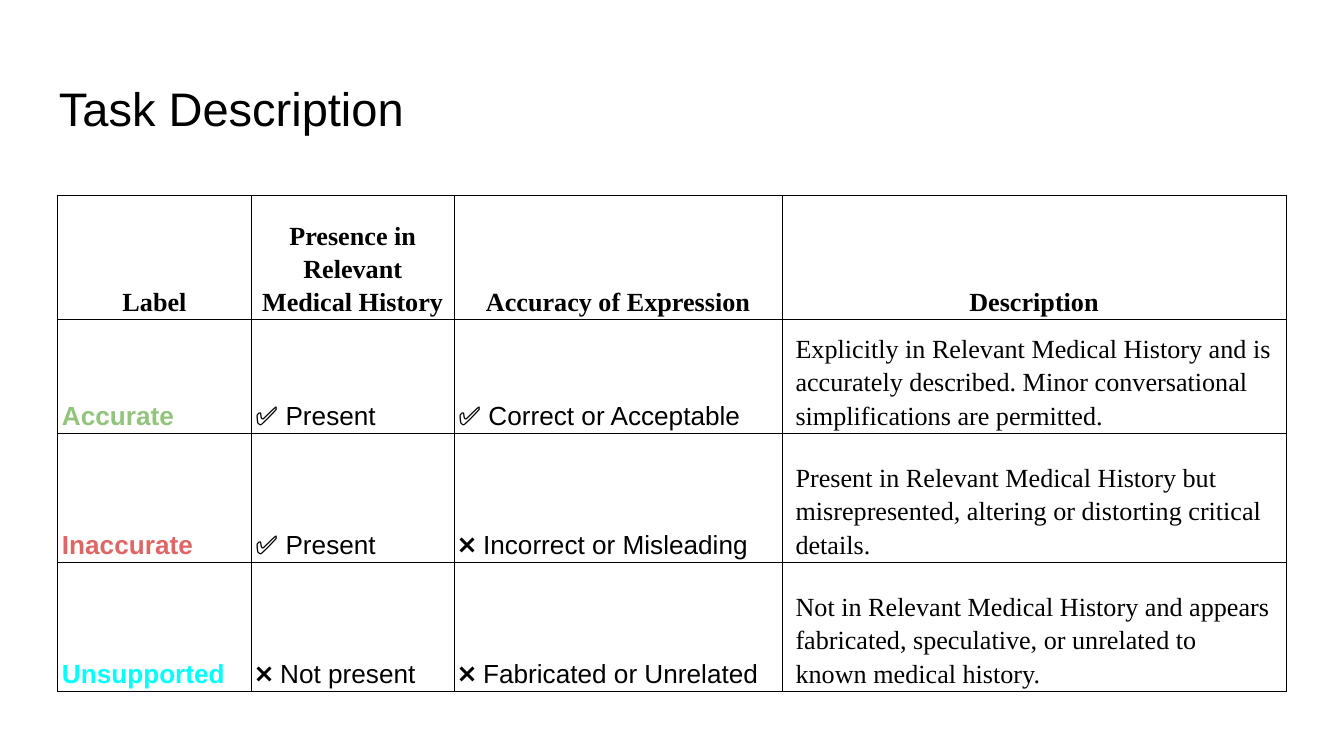
import pptx
import pptx.util
import pptx.dml.color
import pptx.enum.text
import pptx.oxml
import pptx.oxml.ns

Inches = pptx.util.Inches
Pt = pptx.util.Pt
RGB = pptx.dml.color.RGBColor
ALIGN = pptx.enum.text.PP_ALIGN
ANCHOR = pptx.enum.text.MSO_ANCHOR

BLACK = RGB(0x00, 0x00, 0x00)
GREEN = RGB(0x93, 0xC4, 0x7D)
RED = RGB(0xE0, 0x66, 0x66)
CYAN = RGB(0x00, 0xFF, 0xFF)
SANS = "Arial"
SERIF = "Times New Roman"

WIDTHS = [1.44, 1.51, 2.44, 3.75]
HEIGHTS = [0.93, 0.74, 0.96, 0.96]
HEADS = ["Label", "Presence in Relevant Medical History",
         "Accuracy of Expression", "Description"]
LABELS = [
    (GREEN, "Accurate", "✅ Present", "✅ Correct or Acceptable",
     "Explicitly in Relevant Medical History and is accurately described. "
     "Minor conversational simplifications are permitted."),
    (RED, "Inaccurate", "✅ Present", "❌ Incorrect or Misleading",
     "Present in Relevant Medical History but misrepresented, "
     "altering or distorting critical details."),
    (CYAN, "Unsupported", "❌ Not present", "❌ Fabricated or Unrelated",
     "Not in Relevant Medical History and appears fabricated, "
     "speculative, or unrelated to known medical history."),
]


def write(frame, text, size=14, font=SANS, color=BLACK, bold=False,
          align=ALIGN.LEFT, spacing=1.15):
    para = frame.paragraphs[0]
    para.alignment = align
    para.line_spacing = spacing
    run = para.add_run()
    run.text = text
    run.font.size = Pt(size)
    run.font.name = font
    run.font.color.rgb = color
    run.font.bold = bold


def add_title(slide, text):
    box = slide.shapes.add_textbox(
        Inches(0.34), Inches(0.49), Inches(9.32), Inches(0.63))
    frame = box.text_frame
    frame.word_wrap = True
    frame.vertical_anchor = ANCHOR.MIDDLE
    frame.margin_left = frame.margin_right = Inches(0.1)
    frame.margin_top = frame.margin_bottom = Inches(0.1)
    write(frame, text, size=25.2, spacing=1.0)


def add_edges(cell):
    props = cell._tc.get_or_add_tcPr()
    for place, side in enumerate(("lnL", "lnR", "lnT", "lnB")):
        line = pptx.oxml.parse_xml(
            f'<a:{side} {pptx.oxml.ns.nsdecls("a")} w="{Pt(0.48)}">'
            f'<a:solidFill><a:srgbClr val="{BLACK}"/></a:solidFill></a:{side}>')
        props.insert(place, line)


def fill_cell(cell, text, side=1 / 32, **style):
    cell.fill.background()
    cell.vertical_anchor = ANCHOR.BOTTOM
    cell.margin_left = cell.margin_right = Inches(side)
    cell.margin_top = cell.margin_bottom = Inches(1 / 48)
    add_edges(cell)
    write(cell.text_frame, text, **style)


def add_grid(slide):
    holder = slide.shapes.add_table(
        len(HEIGHTS), len(WIDTHS), Inches(0.43), Inches(1.45),
        Inches(3.28), Inches(3.28))
    table = holder.table
    table.first_row = table.horz_banding = False
    for column, width in zip(table.columns, WIDTHS):
        column.width = Inches(width)
    for row, height in zip(table.rows, HEIGHTS):
        row.height = Inches(height)
    holder.width = holder.height = Inches(3.28)
    for col, head in enumerate(HEADS):
        fill_cell(table.cell(0, col), head, font=SERIF, bold=True,
                  align=ALIGN.CENTER)
    for row, (color, label, presence, accuracy, detail) in enumerate(LABELS, 1):
        fill_cell(table.cell(row, 0), label, color=color, bold=True)
        fill_cell(table.cell(row, 1), presence)
        fill_cell(table.cell(row, 2), accuracy)
        fill_cell(table.cell(row, 3), detail, side=0.1, font=SERIF)


def main():
    deck = pptx.Presentation()
    deck.slide_width = Inches(10)
    deck.slide_height = deck.slide_width * 9 // 16
    slide = deck.slides.add_slide(deck.slide_layouts[6])
    add_title(slide, "Task Description")
    add_grid(slide)
    deck.save("out.pptx")


if __name__ == "__main__":
    main()
